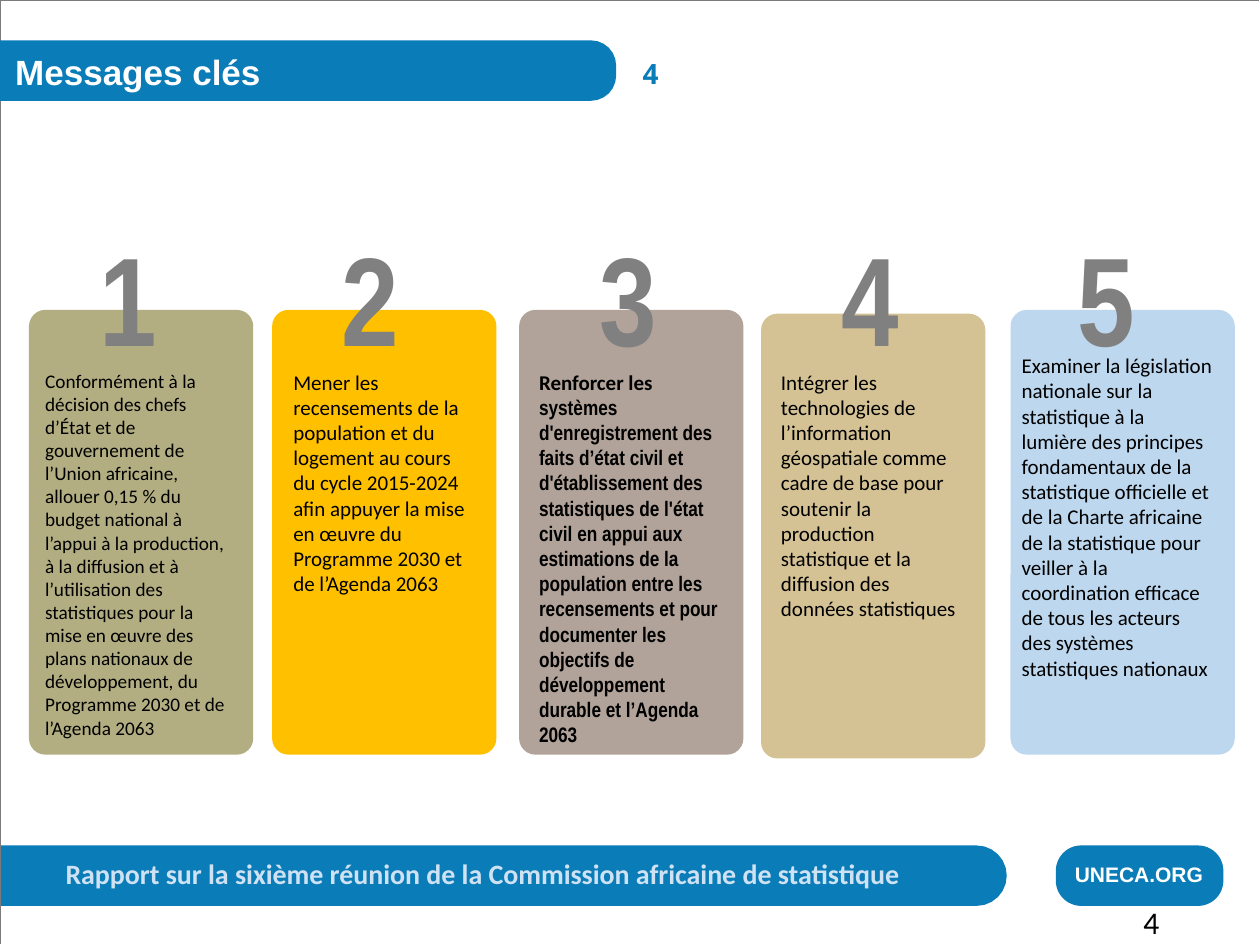
from math import cos, pi, sin

from pptx import Presentation
from pptx.dml.color import RGBColor
from pptx.enum.shapes import MSO_SHAPE
from pptx.enum.text import MSO_ANCHOR, MSO_AUTO_SIZE, PP_ALIGN
from pptx.util import Inches, Pt

ROUNDED = MSO_SHAPE.ROUNDED_RECTANGLE
TOP, MIDDLE = MSO_ANCHOR.TOP, MSO_ANCHOR.MIDDLE
LEFT, RIGHT = PP_ALIGN.LEFT, PP_ALIGN.RIGHT
NO_AUTOSIZE = MSO_AUTO_SIZE.NONE

BLUE = RGBColor(0x0A, 0x7C, 0xB8)
PALE_BLUE = RGBColor(0xCF, 0xE2, 0xF3)
WHITE = RGBColor(0xFF, 0xFF, 0xFF)
BLACK = RGBColor(0, 0, 0)
GRAY = RGBColor(0x80, 0x80, 0x80)
FRAME_GRAY = RGBColor(0x7B, 0x7B, 0x7B)
OLIVE = RGBColor(0xB2, 0xAE, 0x81)
AMBER = RGBColor(0xFF, 0xC0, 0x00)
TAUPE = RGBColor(0xB1, 0xA3, 0x99)
SAND = RGBColor(0xD4, 0xC2, 0x95)
SKY = RGBColor(0xBD, 0xD7, 0xEE)

CARD_W, CARD_H = 1.78, 3.53
# card left, card top, colour, number left, text box, size, [(text, font, bold)]
MESSAGES = [
    (0.23, 2.46, OLIVE, 0.69, (0.26, 2.88, 1.7, 3.06), 11, [
        ("Conformément à la décision des chefs d’État et de gouvernement de "
         "l’Union africaine, allouer 0,15 % du budget national à l’appui à la "
         "production, à la diffusion et à l’utilisation des statistiques pour "
         "la mise en œuvre des plans nationaux de développement, du Programme "
         "2030 et de l’Agenda 2063", "Calibri", False)]),
    (2.16, 2.46, AMBER, 2.61, (2.23, 2.88, 1.64, 1.92), 12, [
        ("Mener les recensements de la population et du logement au cours du "
         "cycle 2015-2024 afin appuyer la mise en œuvre du Programme 2030 et "
         "de l’Agenda 2063", "Calibri", False)]),
    (4.12, 2.46, TAUPE, 4.66, (4.18, 2.88, 1.64, 3.13), 12, [
        ("Renforcer les ", "Calibri", True),
        ("systèmes d'enregistrement des faits d’état civil et d'établissement "
         "des statistiques de l'état civil en appui aux estimations de la "
         "population entre les recensements et pour documenter les objectifs "
         "de développement durable et l’Agenda 2063", "Arial Narrow", True)]),
    (6.04, 2.49, SAND, 6.58, (6.1, 2.88, 1.64, 2.12), 12, [
        ("Intégrer les technologies de l’information géospatiale comme cadre "
         "de base pour soutenir la production statistique et la diffusion des "
         "données statistiques", "Calibri", False)]),
    (8.02, 2.46, SKY, 8.45, (8.01, 2.75, 1.72, 2.73), 12, [
        ("Examiner la législation nationale sur la statistique à la lumière "
         "des principes fondamentaux de la statistique officielle et de la "
         "Charte africaine de la statistique pour veiller à la coordination "
         "efficace de tous les acteurs des systèmes statistiques nationaux",
         "Calibri", False)]),
]


def place(shape, box):
    shape.left, shape.top, shape.width, shape.height = map(Inches, box)


def write(shape, runs, size, color, inset=True, anchor=TOP, align=LEFT):
    """Fill a shape with one paragraph of (text, font, bold) runs."""
    tf = shape.text_frame
    tf.word_wrap = True
    tf.auto_size = NO_AUTOSIZE
    tf.vertical_anchor = anchor
    if not inset:
        tf.margin_left = tf.margin_top = tf.margin_right = tf.margin_bottom = 0
    p = tf.paragraphs[0]
    p.alignment = align
    for text, font, bold in runs:
        r = p.add_run()
        r.text = text
        r.font.name, r.font.size, r.font.bold = font, Pt(size), bold
        r.font.color.rgb = color


def add_text(slide, box, *args, **kwargs):
    write(slide.shapes.add_textbox(*map(Inches, box)), *args, **kwargs)


def paint(shape, color):
    shape.shadow.inherit = False
    shape.fill.solid()
    shape.fill.fore_color.rgb = color
    shape.line.fill.background()


def add_outline(slide, points, close):
    points = [(Inches(x), Inches(y)) for x, y in points]
    builder = slide.shapes.build_freeform(*points[0])
    builder.add_line_segments(points[1:], close=close)
    return builder.convert_to_shape()


def add_rounded(slide, box, radius, color):
    sp = slide.shapes.add_shape(ROUNDED, *map(Inches, box))
    sp.adjustments[0] = radius
    paint(sp, color)


def add_edge_bar(slide, box, radius):
    """Bar that is square on the left and rounded on the right."""
    x, y, w, h = box
    points = [(x, y)]
    for start, cy in ((-pi / 2, y + radius), (0, y + h - radius)):
        for step in range(7):
            a = start + step * pi / 12
            points.append((x + w - radius + radius * cos(a), cy + radius * sin(a)))
    points.append((x, y + h))
    paint(add_outline(slide, points, True), BLUE)


def add_frame(slide, box):
    x, y, w, h = box
    sp = add_outline(slide, [(x, y + h), (x, y), (x + w, y)], False)
    sp.shadow.inherit = False
    sp.fill.background()
    sp.line.color.rgb = FRAME_GRAY
    sp.line.width = Pt(0.25)


def add_header(slide, box):
    x, y, w, h = box
    add_edge_bar(slide, box, 0.2)
    title = slide.shapes.title
    slide.shapes.element.append(title.element)  # bring in front of the bar
    place(title, (x + 0.12, y + 0.08, 3.4, 0.34))
    write(title, [("Messages clés", "Arial", True)], 20, WHITE, inset=False)
    add_text(slide, (x + w + 0.21, y + 0.13, 0.61, 0.27),
             [("4", "Open Sans", True)], 16, BLUE, inset=False)


def add_footer(slide, box):
    x, y, w, h = box
    add_edge_bar(slide, (x, y, 7.99, h), 0.24)
    add_text(slide, (x + 0.52, y + 0.09, 7.59, 0.27),
             [("Rapport sur la sixième réunion de la Commission africaine de "
               "statistique", "Calibri", True)], 16, PALE_BLUE, inset=False)
    add_rounded(slide, (x + w - 1.33, y, 1.33, h), 0.42, BLUE)
    add_text(slide, (x + w - 1.18, y + 0.13, 1.18, 0.2),
             [("UNECA.ORG", "Arial", True)], 12, WHITE, inset=False)
    add_text(slide, (x + w - 0.78, y + 0.53, 0.37, 0.15),
             [("4", "Calibri", False)], 18, BLACK, anchor=MIDDLE, align=RIGHT)


def add_message(slide, box, color, number, number_left, text_box, size, runs):
    add_rounded(slide, box, 0.073, color)
    add_text(slide, (number_left, 1.7, 0.46, 1.31),
             [(str(number), "Arial Narrow", True)], 72, GRAY)
    add_text(slide, text_box, runs, size, BLACK)


def main():
    prs = Presentation()
    prs.slide_width, prs.slide_height = Inches(10), Inches(7.5)
    slide = prs.slides.add_slide(prs.slide_layouts[5])

    add_footer(slide, (0, 6.71, 9.71, 0.48))
    add_frame(slide, (0, 0, 9.99, 7.49))
    add_header(slide, (0, 0.32, 4.89, 0.48))
    for number, (left, top, color, *rest) in enumerate(MESSAGES, 1):
        add_message(slide, (left, top, CARD_W, CARD_H), color, number, *rest)

    prs.save("out.pptx")


if __name__ == "__main__":
    main()
